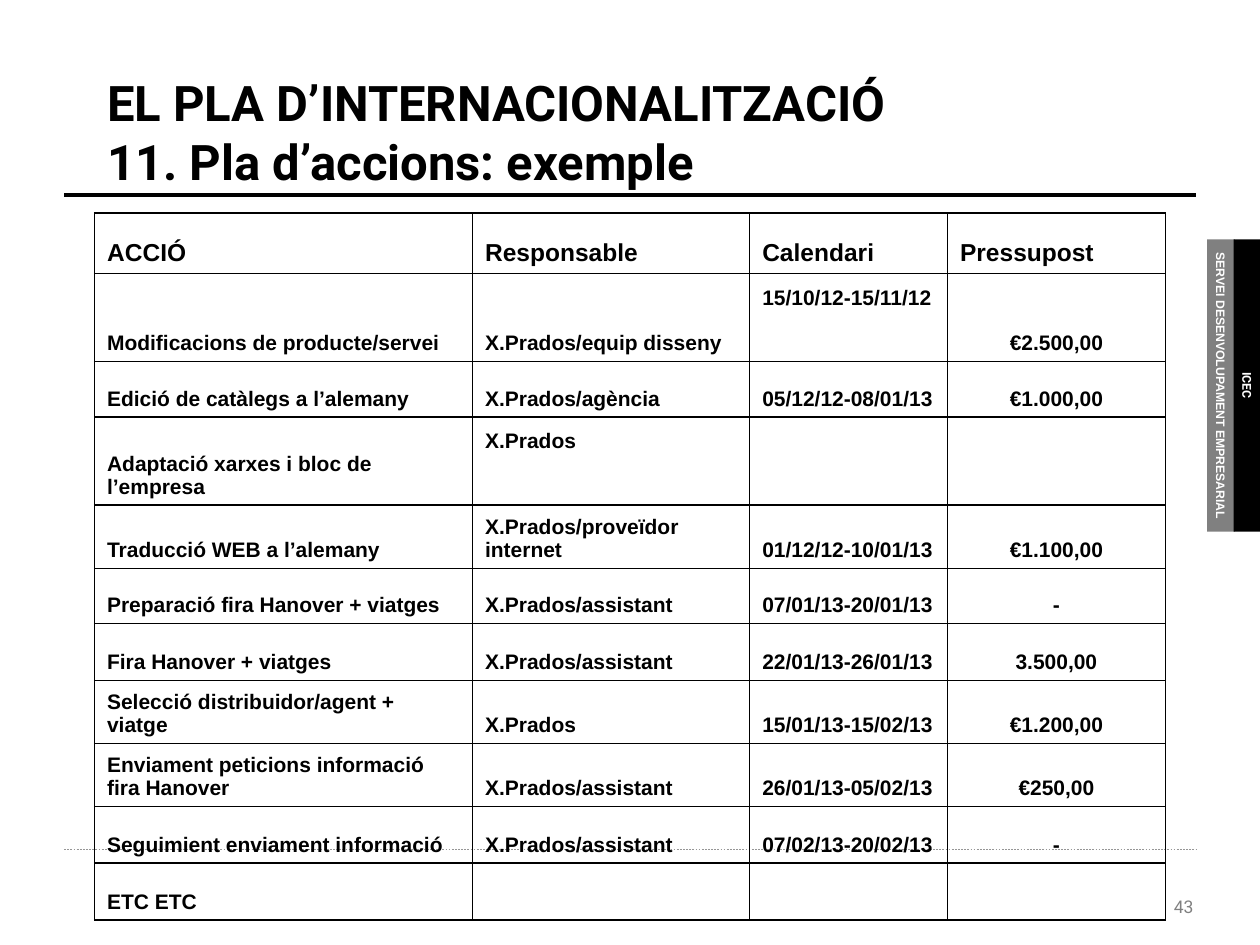
from dataclasses import dataclass

from lxml import etree
from pptx import Presentation
from pptx.dml.color import RGBColor
from pptx.enum.dml import MSO_LINE
from pptx.enum.shapes import MSO_CONNECTOR, MSO_SHAPE
from pptx.enum.text import MSO_ANCHOR, MSO_AUTO_SIZE, PP_ALIGN
from pptx.oxml import parse_xml
from pptx.oxml.ns import nsdecls, qn
from pptx.util import Inches, Pt

LEFT, CENTER, RIGHT = PP_ALIGN.LEFT, PP_ALIGN.CENTER, PP_ALIGN.RIGHT
TOP, MIDDLE, BOTTOM = MSO_ANCHOR.TOP, MSO_ANCHOR.MIDDLE, MSO_ANCHOR.BOTTOM


@dataclass(frozen=True)
class Theme:
    black: str = "000000"
    white: str = "FFFFFF"
    gray: str = "808080"
    rule_gray: str = "969696"
    title_font: str = "Roboto"
    body_font: str = "Arial"
    title_size: float = 28
    header_size: float = 14
    body_size: float = 12
    number_size: float = 10
    tab_size: float = 7


theme = Theme()


def write_text(text_frame, text, size, font=theme.body_font, color=theme.black,
               bold=True, align=LEFT):
    paragraph = text_frame.paragraphs[0]
    paragraph.text = text
    paragraph.alignment = align
    paragraph.font.size = Pt(size)
    paragraph.font.name = font
    paragraph.font.bold = bold
    paragraph.font.color.rgb = RGBColor.from_string(color)


def draw_border(cell):
    properties = cell._tc.get_or_add_tcPr()
    for position, side in enumerate(("lnL", "lnR", "lnT", "lnB")):
        properties.insert(position, parse_xml(
            f'<a:{side} {nsdecls("a")} w="12700"><a:solidFill>'
            f'<a:srgbClr val="{theme.black}"/></a:solidFill></a:{side}>'))


presentation = Presentation()
presentation.slide_width, presentation.slide_height = Inches(10), Inches(7.5)
slide = presentation.slides.add_slide(presentation.slide_layouts[5])

# Title
title = slide.shapes.title
title.left, title.top = Inches(0.75), Inches(0.42)
title.width, title.height = Inches(8.5), Inches(1.25)
title.text_frame.auto_size = MSO_AUTO_SIZE.NONE
title.text_frame.vertical_anchor = MIDDLE
write_text(title.text_frame, "EL PLA D’INTERNACIONALITZACIÓ\n11. Pla d’accions: exemple",
           theme.title_size, font=theme.title_font)

# Header and footer rules
for y, color, width, dash in (
    (1.55, theme.black, 2.25, MSO_LINE.SOLID),
    (6.74, theme.rule_gray, 0.25, MSO_LINE.DASH),
):
    rule = slide.shapes.add_connector(
        MSO_CONNECTOR.STRAIGHT, Inches(0.51), Inches(y), Inches(9.49), Inches(y))
    rule.line.color.rgb = RGBColor.from_string(color)
    rule.line.width = Pt(width)
    rule.line.dash_style = dash
    etree.SubElement(rule._element.spPr, qn("a:effectLst"))

# Page number
number_box = slide.shapes.add_textbox(Inches(7.84), Inches(7.06), Inches(1.73), Inches(0.27))
number_box.text_frame.word_wrap = True
number_box.text_frame.vertical_anchor = MIDDLE
write_text(number_box.text_frame, "43", theme.number_size, font=theme.title_font,
           color=theme.gray, bold=False, align=RIGHT)

# Side tabs
for left, label, fill, font in (
    (8.53, "SERVEI DESENVOLUPAMENT EMPRESARIAL", theme.gray, theme.body_font),
    (8.74, "ICEC", theme.black, theme.title_font),
):
    tab = slide.shapes.add_shape(
        MSO_SHAPE.RECTANGLE, Inches(left), Inches(2.95), Inches(2.32), Inches(0.22))
    tab.rotation = 90
    tab.shadow.inherit = False
    tab.fill.solid()
    tab.fill.fore_color.rgb = RGBColor.from_string(fill)
    tab.line.fill.background()
    tab.text_frame.vertical_anchor = MIDDLE
    write_text(tab.text_frame, label, theme.tab_size, font=font,
               color=theme.white, align=CENTER)

# Action table
column_widths = (3, 2.2, 1.57, 1.73)
rows = (
    (0.48, "ACCIÓ", "Responsable", "Calendari", "Pressupost"),
    (0.7, "Modificacions de producte/servei", "X.Prados/equip disseny",
     "15/10/12-15/11/12", "€2.500,00"),
    (0.44, "Edició de catàlegs a l’alemany", "X.Prados/agència",
     "05/12/12-08/01/13", "€1.000,00"),
    (0.7, "Adaptació xarxes i bloc de l’empresa", "X.Prados", "", ""),
    (0.5, "Traducció WEB a l’alemany", "X.Prados/proveïdor internet",
     "01/12/12-10/01/13", "€1.100,00"),
    (0.44, "Preparació fira Hanover + viatges", "X.Prados/assistant",
     "07/01/13-20/01/13", "-"),
    (0.45, "Fira Hanover + viatges", "X.Prados/assistant",
     "22/01/13-26/01/13", "3.500,00"),
    (0.5, "Selecció distribuidor/agent + viatge", "X.Prados",
     "15/01/13-15/02/13", "€1.200,00"),
    (0.5, "Enviament peticions informació fira Hanover", "X.Prados/assistant",
     "26/01/13-05/02/13", "€250,00"),
    (0.45, "Seguimient enviament informació", "X.Prados/assistant",
     "07/02/13-20/02/13", "-"),
    (0.45, "ETC ETC", "", "", ""),
)
top_anchored = {(1, 2), (3, 1)}

table = slide.shapes.add_table(
    len(rows), len(column_widths), Inches(0.75), Inches(1.69),
    Inches(sum(column_widths)), Inches(sum(row[0] for row in rows))).table
table.first_row = False
table.horz_banding = False
for column, width in zip(table.columns, column_widths):
    column.width = Inches(width)

for row_index, (height, *texts) in enumerate(rows):
    table.rows[row_index].height = Inches(height)
    is_header = row_index == 0
    for column_index, text in enumerate(texts):
        cell = table.cell(row_index, column_index)
        cell.fill.background()
        draw_border(cell)
        cell.vertical_anchor = BOTTOM
        if (row_index, column_index) in top_anchored:
            cell.vertical_anchor = TOP
            cell.margin_top = Inches(0.1)
        write_text(cell.text_frame, text,
                   theme.header_size if is_header else theme.body_size,
                   align=CENTER if column_index == 3 and not is_header else LEFT)

presentation.save("out.pptx")
